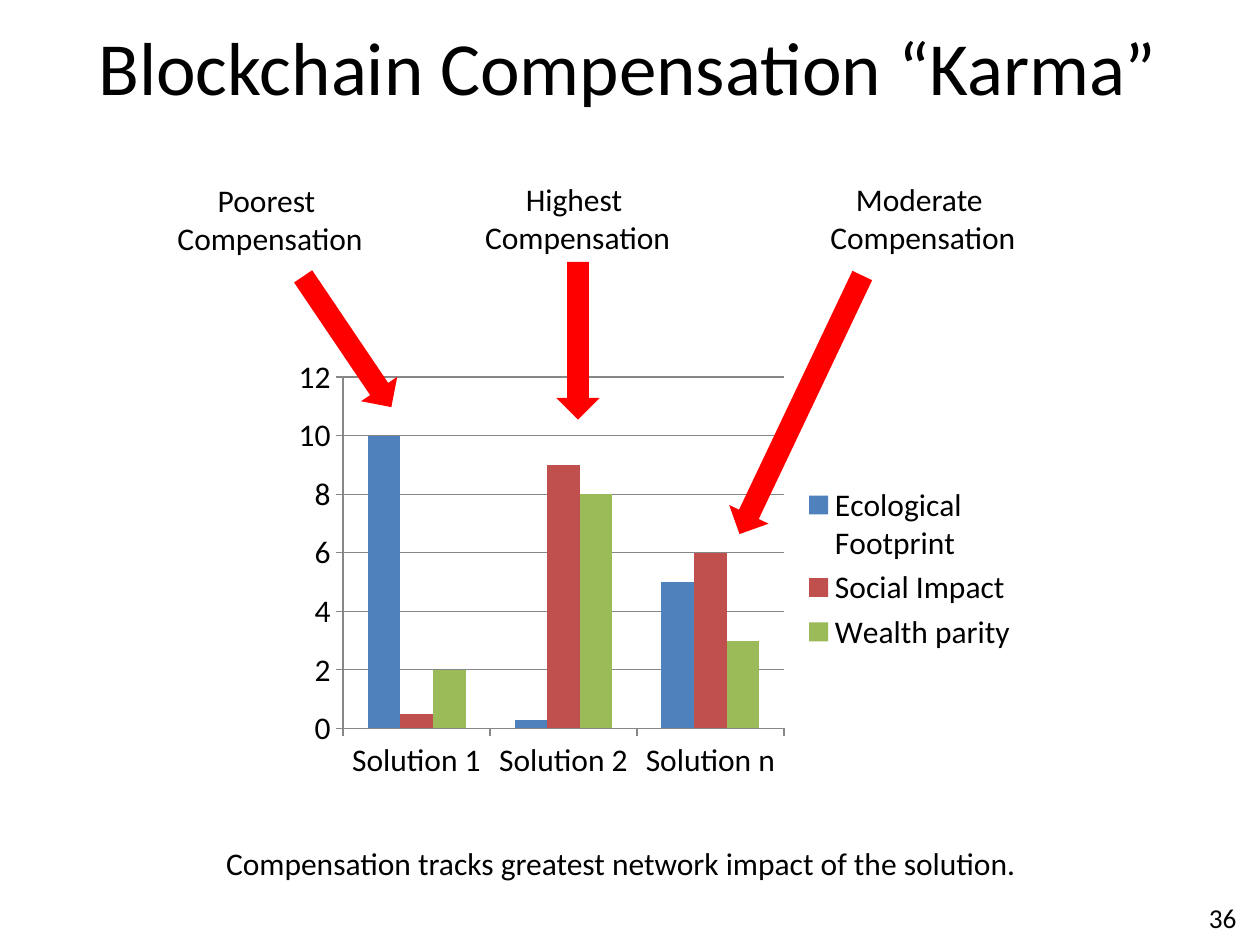
from pptx import Presentation
from pptx.chart.data import CategoryChartData
from pptx.dml.color import RGBColor
from pptx.enum.chart import XL_CHART_TYPE, XL_LEGEND_POSITION, XL_TICK_MARK
from pptx.enum.shapes import MSO_SHAPE
from pptx.enum.text import MSO_ANCHOR, PP_ALIGN
from pptx.util import Cm, Pt

HUES = {
    "ink": "000000",
    "grid": "878787",
    "arrow": "FF0000",
    "blue": "4F81BD",
    "red": "C0504D",
    "green": "9BBB59",
}


def hue(name):
    return RGBColor.from_string(HUES[name])


def style(font, size, color="ink", face="Calibri"):
    font.size = Pt(size)
    font.name = face
    font.color.rgb = hue(color)


def write(frame, text, size=18, color="ink", align=PP_ALIGN.CENTER,
          anchor=MSO_ANCHOR.TOP, wrap=False):
    frame.word_wrap = wrap
    frame.vertical_anchor = anchor
    for i, line in enumerate(text.split("\n")):
        para = frame.paragraphs[0] if i == 0 else frame.add_paragraph()
        para.alignment = align
        run = para.add_run()
        run.text = line
        style(run.font, size, color)


class Deck:
    def __init__(self, wide, high):
        self.file = Presentation()
        self.file.slide_width = Cm(wide)
        self.file.slide_height = Cm(high)
        self.size = 18
        self.slide = self.file.slides.add_slide(self.file.slide_layouts[6])

    def text(self, text, box, **form):
        shape = self.slide.shapes.add_textbox(*map(Cm, box))
        write(shape.text_frame, text, **{"size": self.size, **form})

    def arrow(self, left, top, long, turn):
        box = map(Cm, (left, top, long, 0.88))
        shape = self.slide.shapes.add_shape(MSO_SHAPE.RIGHT_ARROW, *box)
        shape.rotation = turn
        shape.shadow.inherit = False
        shape.fill.solid()
        shape.fill.fore_color.rgb = hue("arrow")
        shape.line.fill.background()

    def chart(self, box, names, rows):
        data = CategoryChartData()
        data.categories = names
        for name, nums, _ in rows:
            data.add_series(name, nums)
        chart = self.slide.shapes.add_chart(
            XL_CHART_TYPE.COLUMN_CLUSTERED, *map(Cm, box), data).chart
        style(chart.font, self.size)
        chart.has_title = False
        chart.has_legend = True
        chart.legend.position = XL_LEGEND_POSITION.RIGHT
        chart.legend.include_in_layout = False
        plot = chart.plots[0]
        plot.gap_width = 150
        plot.overlap = 0
        plot.vary_by_categories = False
        for bars, (_, _, color) in zip(plot.series, rows):
            bars.format.fill.solid()
            bars.format.fill.fore_color.rgb = hue(color)
        scale = chart.value_axis
        scale.minimum_scale, scale.maximum_scale, scale.major_unit = 0, 12, 2
        scale.has_major_gridlines = True
        for axis in (chart.category_axis, scale):
            axis.major_tick_mark = XL_TICK_MARK.OUTSIDE
            axis.minor_tick_mark = XL_TICK_MARK.NONE
        for part in (chart.category_axis, scale, scale.major_gridlines):
            part.format.line.color.rgb = hue("grid")
            part.format.line.width = Pt(0.75)

    def save(self):
        self.file.save("out.pptx")


def main():
    deck = Deck(25.4, 19.05)
    deck.text("Blockchain Compensation “Karma”", (0.1, 0.13, 25.1, 2.39),
              size=42.9, anchor=MSO_ANCHOR.MIDDLE, wrap=True)
    deck.text("36", (23.9, 17.93, 1.5, 1.12),
              size=15.6, anchor=MSO_ANCHOR.MIDDLE, wrap=True)
    deck.chart((5.72, 7.04, 15.06, 8.84),
               ("Solution 1", "Solution 2", "Solution n"),
               (("Ecological Footprint", (10, 0.3, 5), "blue"),
                ("Social Impact", (0.5, 9, 6), "red"),
                ("Wealth parity", (2, 8, 3), "green")))
    deck.text("Compensation tracks greatest network impact of the solution.",
              (4.29, 16.89, 16.46, 1.02))
    for grade, left, top in (("Poorest", 3.3, 3.53),
                             ("Moderate", 16.46, 3.5),
                             ("Highest", 9.5, 3.5)):
        deck.text(f"{grade} \nCompensation", (left, top, 4.29, 1.8))
    for left, top, long, turn in ((5.41, 6.45, 3.18, 56),
                                  (10.06, 6.43, 3.18, 90),
                                  (13.26, 7.72, 5.77, 115.4)):
        deck.arrow(left, top, long, turn)
    deck.save()


if __name__ == "__main__":
    main()
